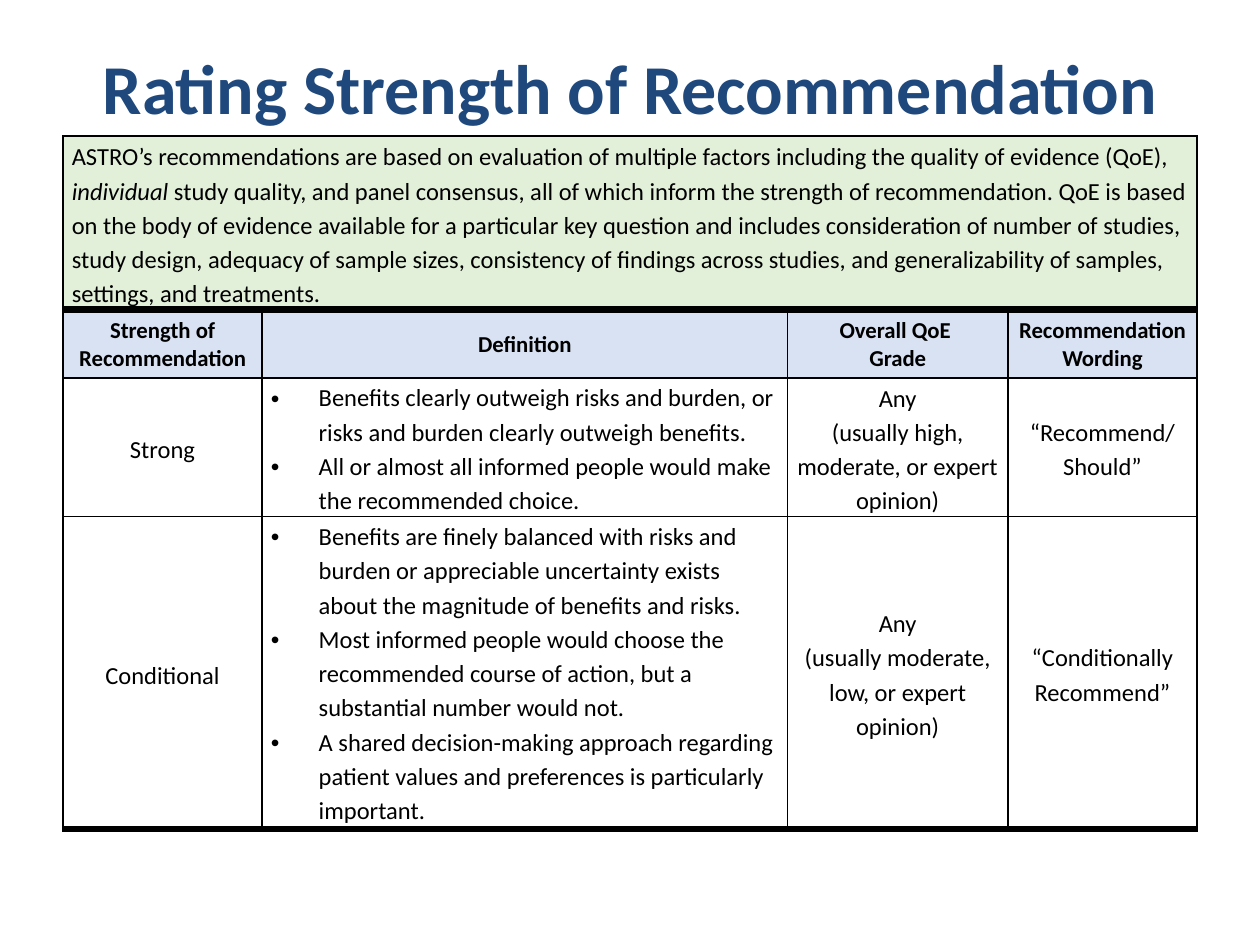
from lxml.etree import SubElement
from pptx import Presentation
from pptx.dml.color import RGBColor as RGB
from pptx.enum.text import MSO_ANCHOR as Anchor, MSO_AUTO_SIZE as Fit, PP_ALIGN as Align
from pptx.oxml import parse_xml
from pptx.oxml.ns import nsdecls, qn
from pptx.util import Inches, Pt

TITLE = "Rating Strength of Recommendation"
# Each run is (text, italic)
INTRO = [
    ("ASTRO’s recommendations are based on evaluation of multiple factors including "
     "the quality of evidence (QoE), ", False),
    ("individual", True),
    (" study quality, and panel consensus, all of which inform the strength of "
     "recommendation. QoE is based on the body of evidence available for a particular "
     "key question and includes consideration of number of studies, study design, "
     "adequacy of sample sizes, consistency of findings across studies, and "
     "generalizability of samples, settings, and treatments.", False),
]
# Each cell is a list of paragraphs
HEADS = [["Strength of Recommendation"], ["Definition"],
         ["Overall QoE ", "Grade"], ["Recommendation Wording"]]
GRADES = [
    [["Strong"],
     ["Benefits clearly outweigh risks and burden, or risks and burden clearly "
      "outweigh benefits.",
      "All or almost all informed people would make the recommended choice."],
     ["Any", "(usually high, moderate, or expert opinion)"],
     ["“Recommend/ Should”"]],
    [["Conditional"],
     ["Benefits are finely balanced with risks and burden or appreciable uncertainty "
      "exists about the magnitude of benefits and risks.",
      "Most informed people would choose the recommended course of action, but a "
      "substantial number would not.",
      "A shared decision-making approach regarding patient values and preferences is "
      "particularly important."],
     ["Any", "(usually moderate, low, or expert opinion)"],
     ["“Conditionally Recommend”"]],
]
COLS = [1.58, 4.17, 1.75, 1.5]
ROWS = [1.38, 0.54, 1.1, 2.48]
BULLETS = 1  # column of definitions
THEME = {
    "font": "Calibri", "title": 40, "head": 13, "body": 14, "lead": 1.15,
    "navy": "1F497D", "ink": "000000", "green": "E2EFD9", "blue": "D9E2F3",
    "thin": 1, "thick": 4.5,
}


def style(para, size, color="ink", bold=False):
    font = para.font
    font.name, font.size, font.bold = THEME["font"], Pt(THEME[size]), bold
    font.color.rgb = RGB.from_string(THEME[color])


def bullet(para):
    props = para._p.get_or_add_pPr()
    props.set("marL", str(Inches(0.38)))
    props.set("indent", str(-Inches(0.38)))
    SubElement(props, qn("a:buFont"), typeface="Arial")
    SubElement(props, qn("a:buChar"), char="•")
    tabs = SubElement(props, qn("a:tabLst"))
    SubElement(tabs, qn("a:tab"), pos=str(Inches(0.5)), algn="l")


def dress(cell, fill, top, base):
    """Set margins, fill and the four borders of a cell."""
    cell.margin_left = cell.margin_right = Inches(0.07)
    cell.margin_top, cell.margin_bottom = Inches(0.01), 0
    if fill:
        cell.fill.solid()
        cell.fill.fore_color.rgb = RGB.from_string(THEME[fill])
    else:
        cell.fill.background()
    props = cell._tc.get_or_add_tcPr()
    sides = [("L", "thin"), ("R", "thin"), ("T", top), ("B", base)]
    for spot, (side, width) in enumerate(sides):
        props.insert(spot, parse_xml(
            f'<a:ln{side} {nsdecls("a")} w="{Pt(THEME[width])}"><a:solidFill>'
            f'<a:srgbClr val="{THEME["ink"]}"/></a:solidFill></a:ln{side}>'))


def write(cell, texts, head, listed):
    cell.vertical_anchor = Anchor.TOP if listed else Anchor.MIDDLE
    frame = cell.text_frame
    for i, text in enumerate(texts):
        para = frame.add_paragraph() if i else frame.paragraphs[0]
        para.text = text
        if listed:
            bullet(para)
        else:
            para.alignment = Align.CENTER
        if not head:
            para.line_spacing = THEME["lead"]
        style(para, "head" if head else "body", bold=head)


def add_title(slide):
    title = slide.shapes.title
    title.left, title.top = Inches(0.5), Inches(0.3)
    title.width, title.height = Inches(9), Inches(1.25)
    frame = title.text_frame
    frame.text = TITLE
    frame.auto_size, frame.vertical_anchor = Fit.NONE, Anchor.TOP
    para = frame.paragraphs[0]
    para.alignment = Align.CENTER
    style(para, "title", "navy", True)


def add_grid(slide):
    grid = slide.shapes.add_table(
        len(ROWS), len(COLS), Inches(0.5), Inches(1.08),
        Inches(sum(COLS)), Inches(sum(ROWS))).table
    for col, width in zip(grid.columns, COLS):
        col.width = Inches(width)
    for row, height in zip(grid.rows, ROWS):
        row.height = Inches(height)

    fills = ["green", "blue", None, None]
    lines = ["thin", "thick", "thin", "thin", "thick"]
    for r, fill in enumerate(fills):
        for cell in grid.rows[r].cells:
            dress(cell, fill, lines[r], lines[r + 1])

    intro = grid.cell(0, 0)
    intro.merge(grid.cell(0, len(COLS) - 1))
    intro.vertical_anchor = Anchor.MIDDLE
    para = intro.text_frame.paragraphs[0]
    para.line_spacing = THEME["lead"]
    for text, slant in INTRO:
        run = para.add_run()
        run.text, run.font.italic = text, slant
    style(para, "body")

    for r, row in enumerate([HEADS, *GRADES], 1):
        for c, texts in enumerate(row):
            head = row is HEADS
            write(grid.cell(r, c), texts, head, c == BULLETS and not head)


def main():
    deck = Presentation()
    deck.slide_width, deck.slide_height = Inches(10), Inches(7.5)
    slide = deck.slides.add_slide(deck.slide_layouts[5])
    add_title(slide)
    add_grid(slide)
    deck.save("out.pptx")


if __name__ == "__main__":
    main()
